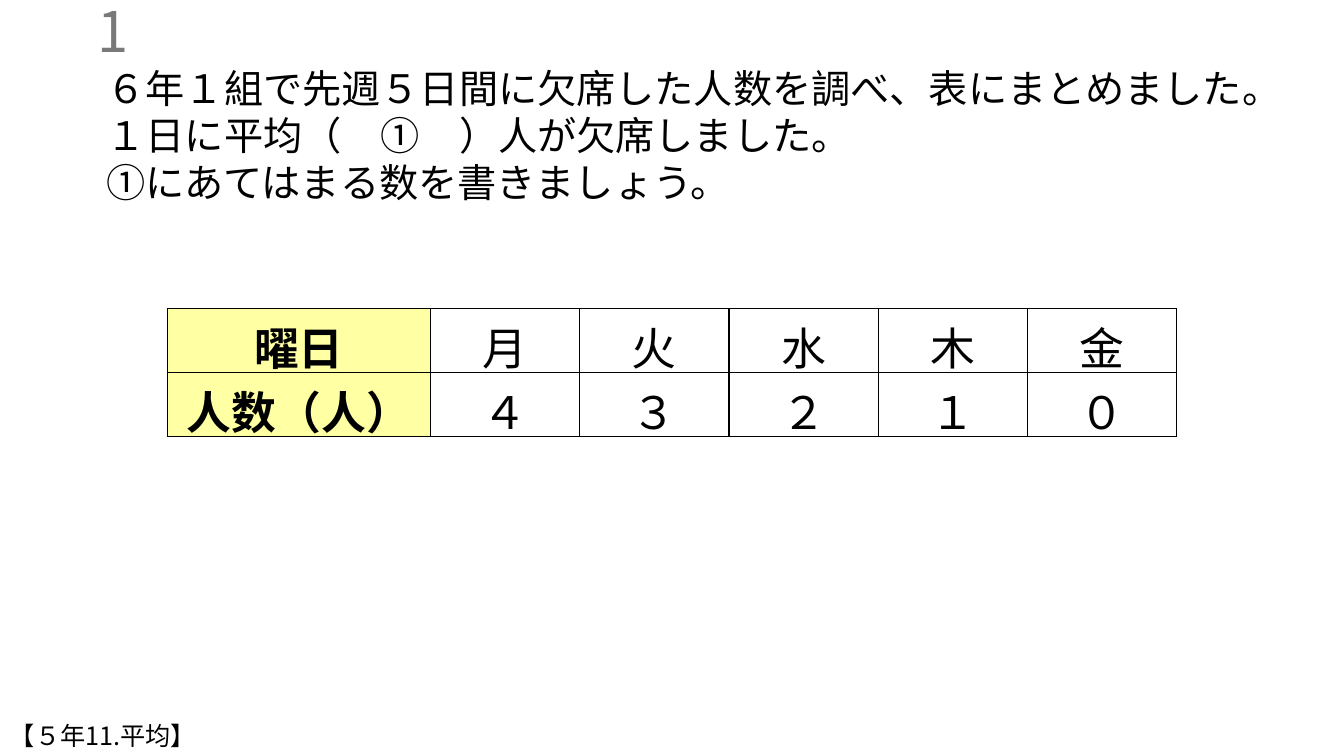
from pptx import Presentation
from pptx.dml.color import RGBColor
from pptx.enum.text import MSO_ANCHOR as Anchor, PP_ALIGN as Align
from pptx.oxml import parse_xml
from pptx.oxml.ns import nsdecls
from pptx.util import Inches, Pt

FACE = "Noto Sans CJK JP"


def style(para, size, color="000000", bold=False, align=Align.LEFT):
    para.alignment = align
    for run in para.runs:
        look = {"name": FACE, "size": Pt(size), "bold": bold}
        for key, value in look.items():
            setattr(run.font, key, value)
        run.font.color.rgb = RGBColor.from_string(color)
        run.font._element.append(parse_xml(f'<a:ea {nsdecls("a")} typeface="{FACE}"/>'))


def edge(cell):
    """Draw a thin black line on all four sides of the cell."""
    props = cell._tc.get_or_add_tcPr()
    for spot, side in enumerate(("lnL", "lnR", "lnT", "lnB")):
        props.insert(spot, parse_xml(
            f'<a:{side} {nsdecls("a")} w="12700"><a:solidFill>'
            f'<a:srgbClr val="000000"/></a:solidFill></a:{side}>'))


deck = Presentation()
deck.slide_width, deck.slide_height = Inches(13.33), Inches(7.5)
slide = deck.slides.add_slide(deck.slide_layouts[6])

task = """６年１組で先週５日間に欠席した人数を調べ、表にまとめました。
１日に平均（　①　）人が欠席しました。
①にあてはまる数を書きましょう。"""
texts = [
    (task, (0.96, 0.59, 11.96, 1.51), 28, "000000", Align.LEFT, Anchor.TOP),
    ("1", (-1.63, 0.1, 3, 0.4), 40, "797979", Align.RIGHT, Anchor.MIDDLE),
    ("【５年11.平均】", (0, 7.1, 7.49, 0.4), 18, "000000", Align.LEFT, Anchor.TOP),
]
for text, place, size, color, align, anchor in texts:
    frame = slide.shapes.add_textbox(*map(Inches, place)).text_frame
    frame.word_wrap = True
    frame.vertical_anchor = anchor
    frame.text = text
    for para in frame.paragraphs:
        style(para, size, color, align=align)

rows = [("曜日", *"月火水木金"), ("人数（人）", *"４３２１０")]
widths = [2.61] + [1.48] * 5
place = (1.66, 3.06, sum(widths), 1.27)
table = slide.shapes.add_table(len(rows), len(widths), *map(Inches, place)).table
for col, width in zip(table.columns, widths):
    col.width = Inches(width)
for r, row in enumerate(rows):
    for c, text in enumerate(row):
        cell = table.cell(r, c)
        cell.text = text
        cell.vertical_anchor = Anchor.MIDDLE
        cell.fill.solid()
        cell.fill.fore_color.rgb = RGBColor.from_string("FFFFFF" if c else "FFFFA3")
        edge(cell)
        style(cell.text_frame.paragraphs[0], 32, bold=c == 0, align=Align.CENTER)

deck.save("out.pptx")
